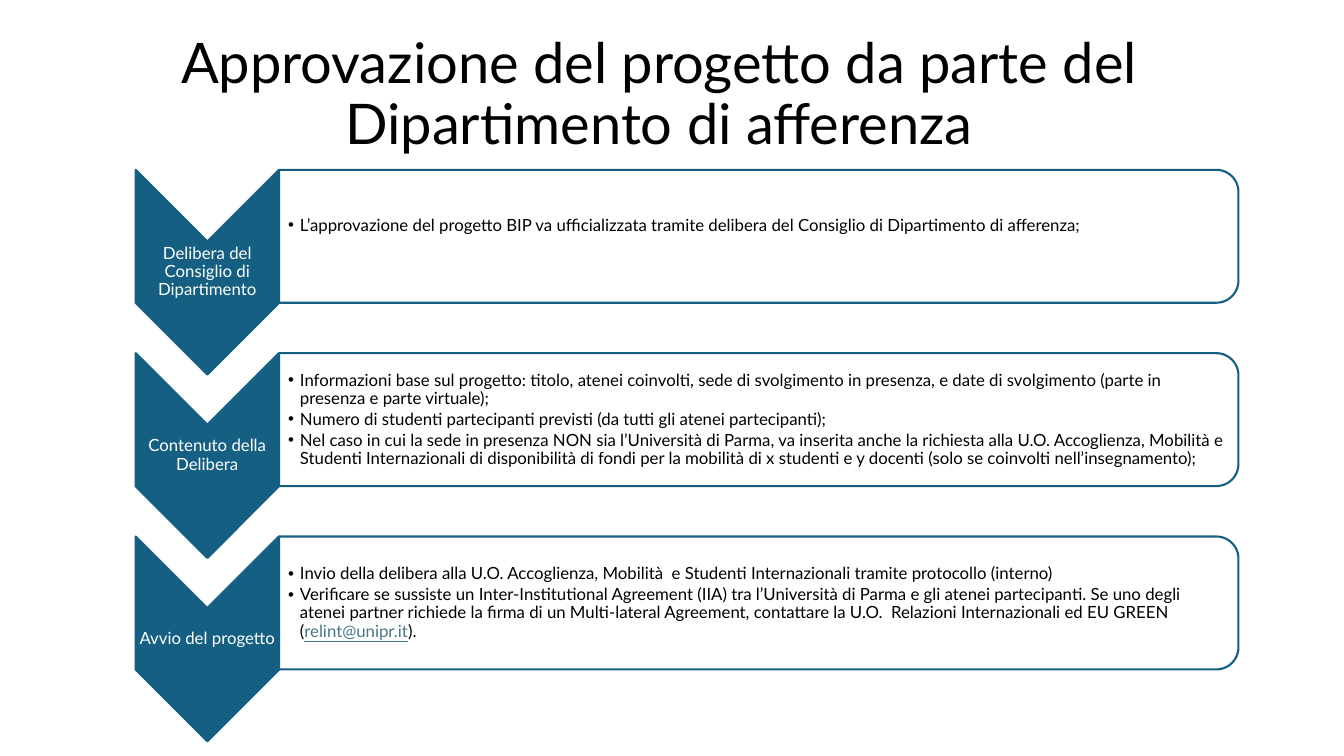
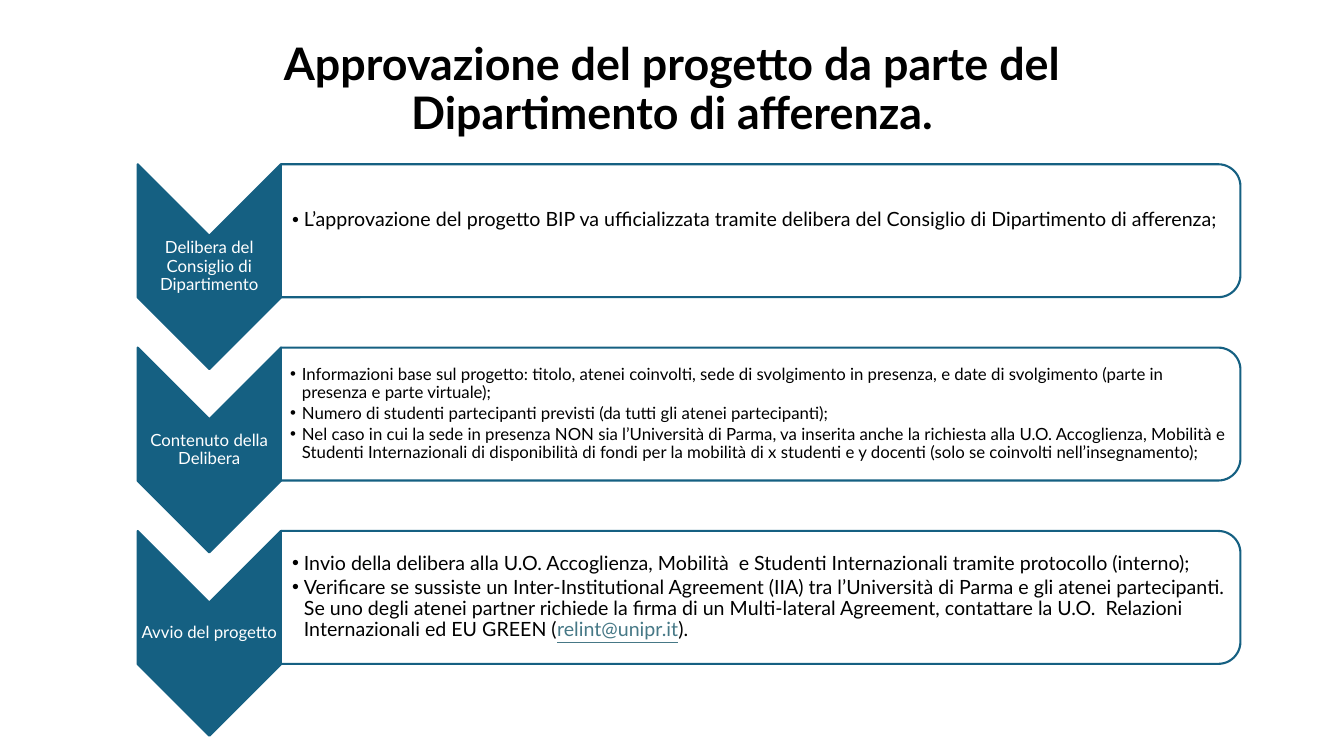
from lxml.etree import SubElement
from pptx import Presentation
from pptx.dml.color import RGBColor
from pptx.enum.shapes import MSO_SHAPE
from pptx.enum.text import MSO_ANCHOR, PP_ALIGN
from pptx.oxml.ns import qn
from pptx.util import Cm, Pt

HUES = {"teal": "156082", "white": "FFFFFF", "black": "000000", "link": "467886"}
FONT = "Lato"
TITLE = "Approvazione del progetto da parte del Dipartimento di afferenza"
MAIL = "relint@unipr.it"
ARROW_W, ARROW_H = 3.61, 5.16
PANEL_W, PANEL_H = 24.18, 3.35
LABEL_H, BODY_W, BODY_H = 1.55, 24, 3.02
PITCH, INDENT, EDGE = 4.62, 0.3, 0.03


def hue(name):
    return RGBColor.from_string(HUES[name])


def add_run(para, text, size, color="black", bold=False):
    run = para.add_run()
    run.text = text
    font = run.font
    font.name, font.size, font.bold = FONT, Pt(size), bold
    font.color.rgb = hue(color)
    if color == "link":
        font.underline = True


def add_box(slide, left, top, width, height, pads):
    box = slide.shapes.add_textbox(Cm(left), Cm(top), Cm(width), Cm(height))
    frame = box.text_frame
    frame.word_wrap = True
    frame.vertical_anchor = MSO_ANCHOR.MIDDLE
    frame.margin_left, frame.margin_top, frame.margin_right, frame.margin_bottom = map(Cm, pads)
    return frame


def add_line(slide, area, pads, text, size, color, bold=False):
    para = add_box(slide, *area, pads).paragraphs[0]
    para.alignment = PP_ALIGN.CENTER
    para.line_spacing = 0.9
    add_run(para, text, size, color, bold)


def add_turned(slide, kind, left, top, width, height, fill):
    shape = slide.shapes.add_shape(
        kind, Cm(left + (width - height) / 2), Cm(top + (height - width) / 2),
        Cm(height), Cm(width))
    shape.rotation = 90
    shape.shadow.inherit = False
    shape.fill.solid()
    shape.fill.fore_color.rgb = hue(fill)
    shape.line.color.rgb = hue("teal")
    shape.line.width = Pt(1.5)


def set_bullet(para):
    props = para._p.get_or_add_pPr()
    props.set("marL", str(Cm(INDENT)))
    props.set("indent", str(-Cm(INDENT)))
    SubElement(props, qn("a:buFont"), typeface="Arial")
    SubElement(props, qn("a:buChar"), char="•")
    para.line_spacing = 0.9
    para.space_after = Pt(2)


def add_body(slide, left, top, items, size):
    inset = 0.23 if size == 12 else 0.28
    foot = 0.55 if len(items) == 1 else EDGE
    frame = add_box(slide, left, top, BODY_W, BODY_H, (inset, EDGE, EDGE, foot))
    for spot, item in enumerate(items):
        para = frame.add_paragraph() if spot else frame.paragraphs[0]
        set_bullet(para)
        for text in item:
            add_run(para, text, size, "link" if text == MAIL else "black")


def add_step(slide, left, top, label, items, size):
    add_turned(slide, MSO_SHAPE.CHEVRON, left, top, ARROW_W, ARROW_H, "teal")
    area = (left, top + (ARROW_H - LABEL_H) / 2, ARROW_W, LABEL_H)
    add_line(slide, area, [EDGE] * 4, label, 12, "white")
    side = left + ARROW_W
    add_turned(slide, MSO_SHAPE.ROUND_2_SAME_RECTANGLE, side, top, PANEL_W, PANEL_H, "white")
    add_body(slide, side, top + (PANEL_H - BODY_H) / 2, items, size)


def get_steps(end):
    return [
        ("Delibera del Consiglio di Dipartimento", [
            ["L’approvazione del progetto BIP va ufficializzata tramite delibera del "
             "Consiglio di Dipartimento di afferenza;"]]),
        ("Contenuto della Delibera", [
            ["Informazioni base sul progetto: titolo, atenei coinvolti, sede di svolgimento "
             "in presenza, e date di svolgimento (parte in presenza e parte virtuale);"],
            ["Numero di studenti partecipanti previsti (da tutti gli atenei partecipanti);"],
            ["Nel caso in cui la sede in presenza NON sia l’Università di Parma, va inserita "
             "anche la richiesta alla U.O. Accoglienza, Mobilità e Studenti Internazionali di "
             "disponibilità di fondi per la mobilità di x studenti e y docenti (solo se "
             "coinvolti nell’insegnamento);"]]),
        ("Avvio del progetto", [
            ["Invio della delibera alla U.O. Accoglienza, Mobilità  e Studenti Internazionali "
             "tramite protocollo (interno)" + end],
            ["Verificare se sussiste un Inter-Institutional Agreement (IIA) tra l’Università "
             "di Parma e gli atenei partecipanti. Se uno degli atenei partner richiede la "
             "firma di un Multi-lateral Agreement, contattare la U.O.  Relazioni "
             "Internazionali ed EU GREEN (", MAIL, ")."]]),
    ]


def add_page(deck, area, title, size, bold, left, top, end, sizes):
    slide = deck.slides.add_slide(deck.slide_layouts[6])
    add_line(slide, area, (0.25, 0.13, 0.25, 0.13), title, size, "black", bold)
    for row, ((label, items), body) in enumerate(zip(get_steps(end), sizes)):
        add_step(slide, left, top + row * PITCH, label, items, body)


def main():
    deck = Presentation()
    deck.slide_width, deck.slide_height = Cm(33.87), Cm(19.05)
    add_page(deck, (2, 0.58, 29.21, 3.68), TITLE, 40, False, 3.42, 4.28, "", (12, 12, 12))
    add_page(deck, (3.81, 1.04, 26.26, 2.49), TITLE + ".", 32, True, 3.47, 4.14, ";", (14, 12, 14))
    deck.save("out.pptx")


if __name__ == "__main__":
    main()
